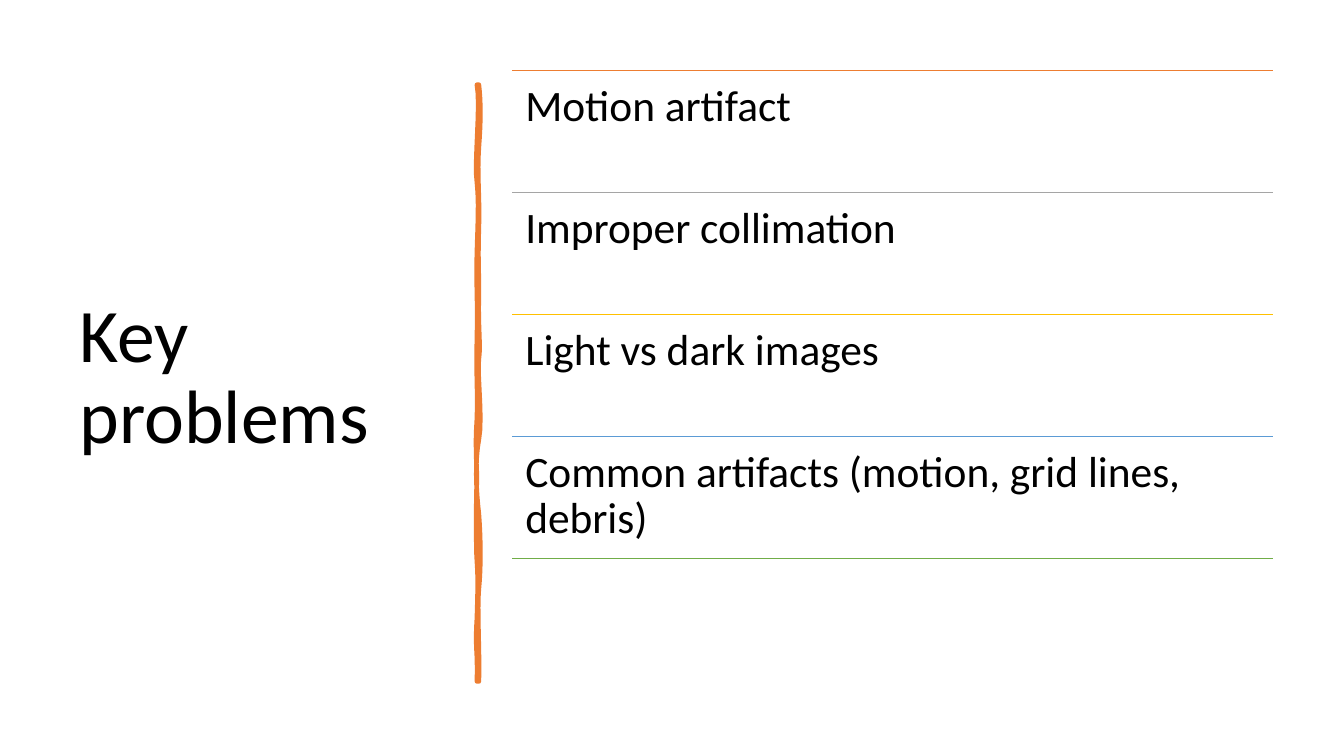
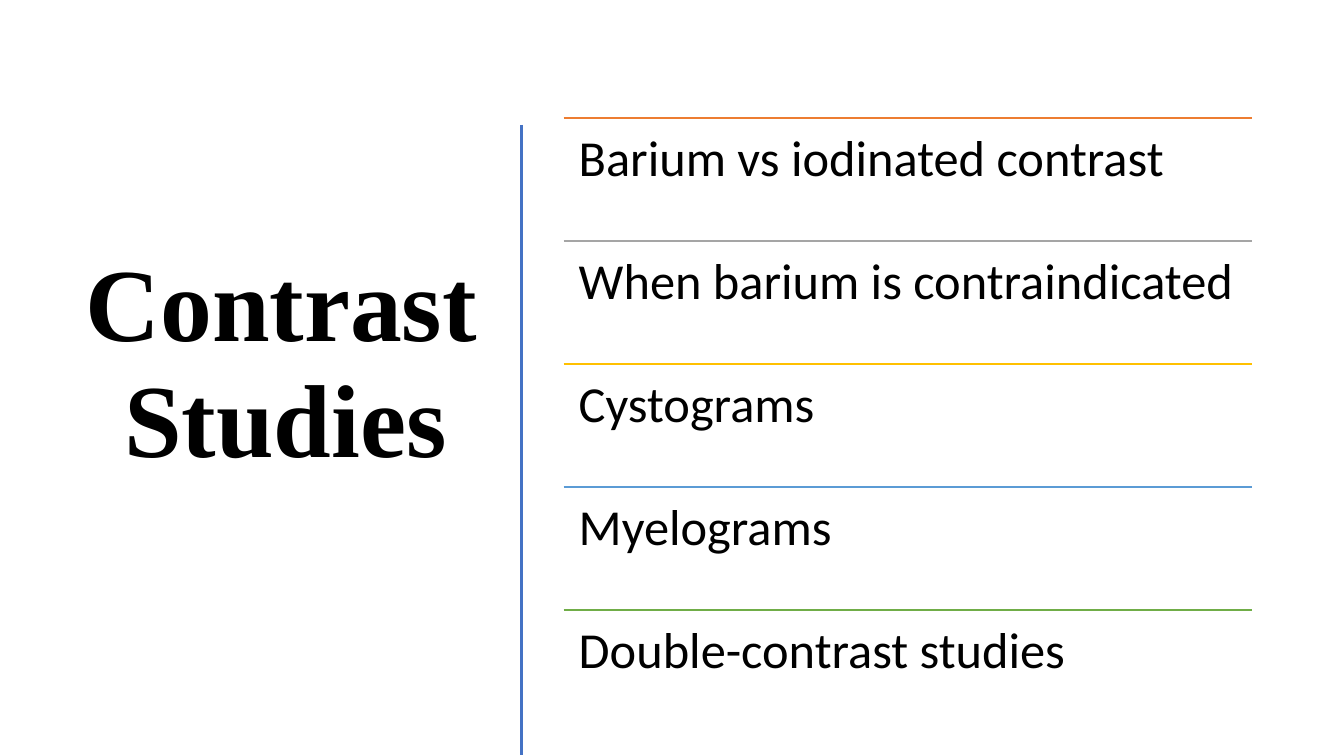
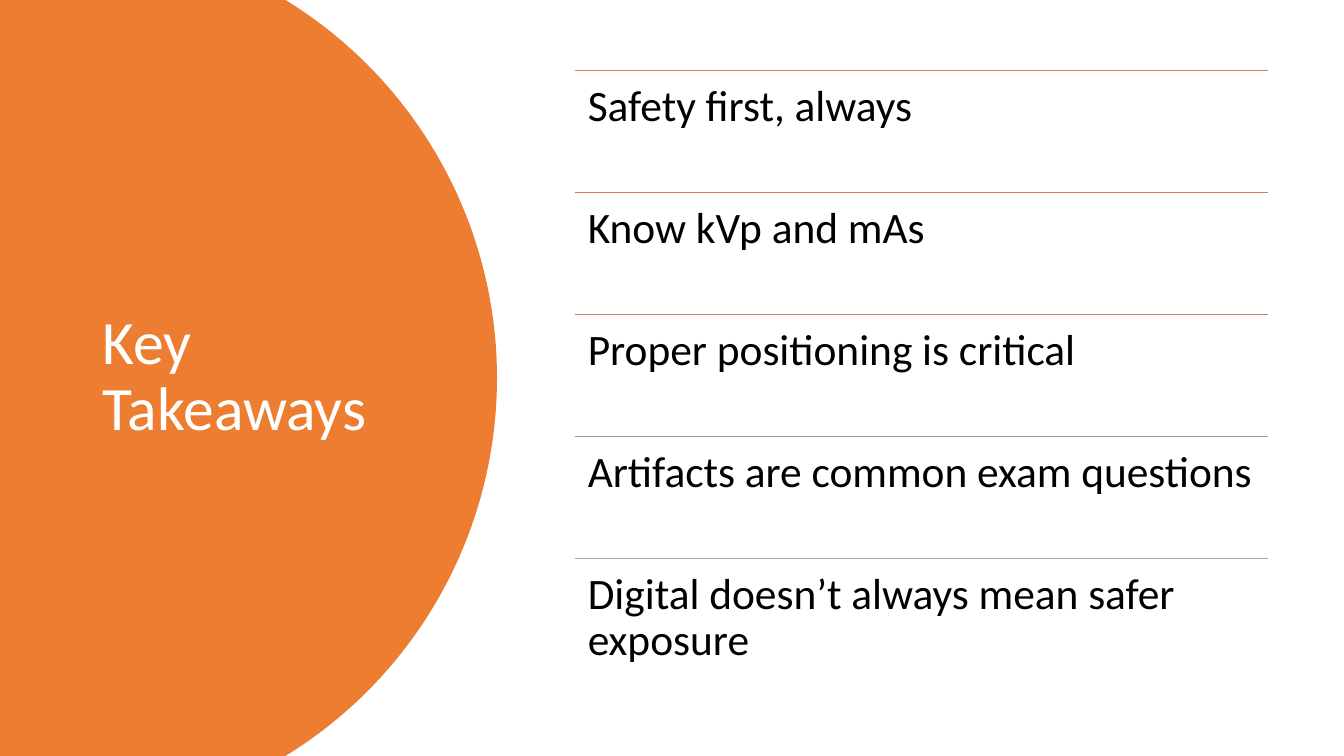
"""Build three list slides on radiography: problems, contrast studies, takeaways."""
from math import asin, cos, sin

from lxml import etree
from pptx import Presentation
from pptx.dml.color import RGBColor
from pptx.enum.shapes import MSO_CONNECTOR
from pptx.enum.text import MSO_ANCHOR, PP_ALIGN
from pptx.oxml.ns import qn
from pptx.util import Inches, Pt

STRAIGHT = MSO_CONNECTOR.STRAIGHT
TOP, MIDDLE = MSO_ANCHOR.TOP, MSO_ANCHOR.MIDDLE
LEFT, RIGHT = PP_ALIGN.LEFT, PP_ALIGN.RIGHT

HUES = {
    "text": "000000", "white": "FFFFFF", "orange": "ED7D31",
    "grey": "A5A5A5", "gold": "FFC000", "sky": "5B9BD5",
    "green": "70AD47", "blue": "4472C4", "rust": "D87A51",
    "rose": "C48170", "mauve": "B4908B",
}
BRIGHT = ["orange", "grey", "gold", "sky", "green"]
FADE = ["orange", "rust", "rose", "mauve", "grey"]

EDGE_A = [
    (4.75, 0.84), (4.77, 1.02), (4.77, 1.19), (4.75, 1.46), (4.73, 1.73),
    (4.76, 1.95), (4.75, 2.26), (4.74, 2.57), (4.75, 2.62), (4.75, 2.94),
    (4.74, 3.25), (4.77, 3.42), (4.75, 3.56), (4.73, 3.7), (4.79, 4.14),
    (4.75, 4.36), (4.71, 4.57), (4.72, 4.84), (4.75, 5.1), (4.77, 5.36),
    (4.77, 5.64), (4.75, 5.84), (4.73, 6.03), (4.76, 6.5), (4.75, 6.76),
]
EDGE_B = [
    (4.73, 6.76), (4.74, 6.46), (4.71, 6.44), (4.73, 6.13), (4.74, 5.83),
    (4.74, 5.7), (4.73, 5.57), (4.72, 5.44), (4.72, 4.95), (4.73, 4.77),
    (4.73, 4.59), (4.71, 4.45), (4.73, 4.15), (4.74, 3.86), (4.72, 3.73),
    (4.73, 3.35), (4.74, 2.98), (4.72, 2.81), (4.73, 2.5), (4.74, 2.18),
    (4.75, 2), (4.73, 1.81), (4.7, 1.63), (4.77, 1.04), (4.73, 0.84),
]


def hue(name):
    """Return the named colour."""
    return RGBColor.from_string(HUES[name])


def bend(knots, steps=8):
    """Return points along a chain of cubic curves."""
    points = [knots[0]]
    for i in range(0, len(knots) - 1, 3):
        for n in range(1, steps + 1):
            t = n / steps
            parts = ((1 - t) ** 3, 3 * t * (1 - t) ** 2,
                     3 * t ** 2 * (1 - t), t ** 3)
            points.append(tuple(
                sum(w * k[axis] for w, k in zip(parts, knots[i:i + 4]))
                for axis in (0, 1)))
    return points


def disc(mid_x, mid_y, radius, steps=96):
    """Return the right arc of a disc cut by the slide, closed at the left."""
    limit = asin(mid_y / radius)
    turns = [limit * (2 * n / steps - 1) for n in range(steps + 1)]
    arc = [(mid_x + radius * cos(a), mid_y + radius * sin(a)) for a in turns]
    return [(0, 0)] + arc + [(0, 2 * mid_y)]


class Deck:
    """Hold the style and the current slide."""

    font = "Calibri"

    def __init__(self):
        """Start an empty wide deck."""
        self.show = Presentation()
        self.show.slide_width = Inches(13.33)
        self.show.slide_height = Inches(7.5)
        self.slide = None

    def page(self):
        """Add a blank slide."""
        self.slide = self.show.slides.add_slide(self.show.slide_layouts[6])

    def text(self, words, box, size, inset=(0.1, 0.05), anchor=TOP,
             align=LEFT, tint="text", font=None, bold=False, lead=0.9):
        """Add one paragraph of wrapped text."""
        frame = self.slide.shapes.add_textbox(*map(Inches, box)).text_frame
        frame.word_wrap = True
        frame.vertical_anchor = anchor
        frame.margin_left = frame.margin_right = Inches(inset[0])
        frame.margin_top = frame.margin_bottom = Inches(inset[1])
        para = frame.paragraphs[0]
        para.alignment = align
        para.line_spacing = lead
        run = para.add_run()
        run.text = words
        run.font.name = font or self.font
        run.font.size = Pt(size)
        run.font.bold = bold
        run.font.color.rgb = hue(tint)

    def title(self, words, box, size, **style):
        """Add a title centred in height."""
        self.text(words, box, size, anchor=MIDDLE, **style)

    def line(self, start, end, tint, width=1):
        """Add a straight line without shadow."""
        rule = self.slide.shapes.add_connector(
            STRAIGHT, *map(Inches, start + end))
        rule.line.color.rgb = hue(tint)
        rule.line.width = Pt(width)
        etree.SubElement(rule._element.spPr, qn("a:effectLst"))

    def form(self, points, tint, width=0):
        """Add a filled outline, with a line if it has a width."""
        spots = [(Inches(x), Inches(y)) for x, y in points]
        maker = self.slide.shapes.build_freeform(*spots[0])
        maker.add_line_segments(spots[1:], close=True)
        shape = maker.convert_to_shape()
        shape.shadow.inherit = False
        shape.fill.solid()
        shape.fill.fore_color.rgb = hue(tint)
        if width:
            shape.line.color.rgb = hue(tint)
            shape.line.width = Pt(width)
        else:
            shape.line.fill.background()

    def rows(self, items, tints, left, top, width, pitch, size, inset):
        """Add ruled rows of text, one rule for each tint."""
        for i, tint in enumerate(tints):
            y = top + i * pitch
            self.line((left, y), (left + width, y), tint)
            if i < len(items):
                self.text(items[i], (left, y, width, pitch), size,
                          (inset, inset))


def main():
    """Build and save the deck."""
    deck = Deck()

    deck.page()
    deck.title("Key problems", (0.69, 0.7, 3.74, 6.11), 54)
    deck.form(bend(EDGE_A) + bend(EDGE_B), "orange", 3.25)
    deck.rows(["Motion artifact", "Improper collimation",
               "Light vs dark images",
               "Common artifacts (motion, grid lines, debris)"],
              BRIGHT, 5.08, 0.7, 7.55, 1.21, 31, 0.13)

    deck.page()
    deck.title("Contrast Studies\t", (0.52, 1.17, 4.31, 4.89), 74,
               align=RIGHT, font="Times New Roman", bold=True, lead=0.94)
    deck.line((5.17, 1.24), (5.17, 7.49), "blue", 2)
    deck.rows(["Barium vs iodinated contrast",
               "When barium is contraindicated", "Cystograms",
               "Myelograms", "Double-contrast studies"],
              BRIGHT, 5.59, 1.17, 6.83, 1.22, 36, 0.15)

    deck.page()
    deck.form(disc(0.53, 3.75, 4.4), "orange")
    deck.title("Key Takeaways", (0.92, 0.7, 3.23, 6.09), 44, tint="white")
    deck.rows(["Safety first, always", "Know kVp and mAs",
               "Proper positioning is critical",
               "Artifacts are common exam questions",
               "Digital doesn’t always mean safer exposure"],
              FADE, 5.7, 0.7, 6.88, 1.21, 31, 0.13)

    deck.show.save("out.pptx")


if __name__ == "__main__":
    main()
